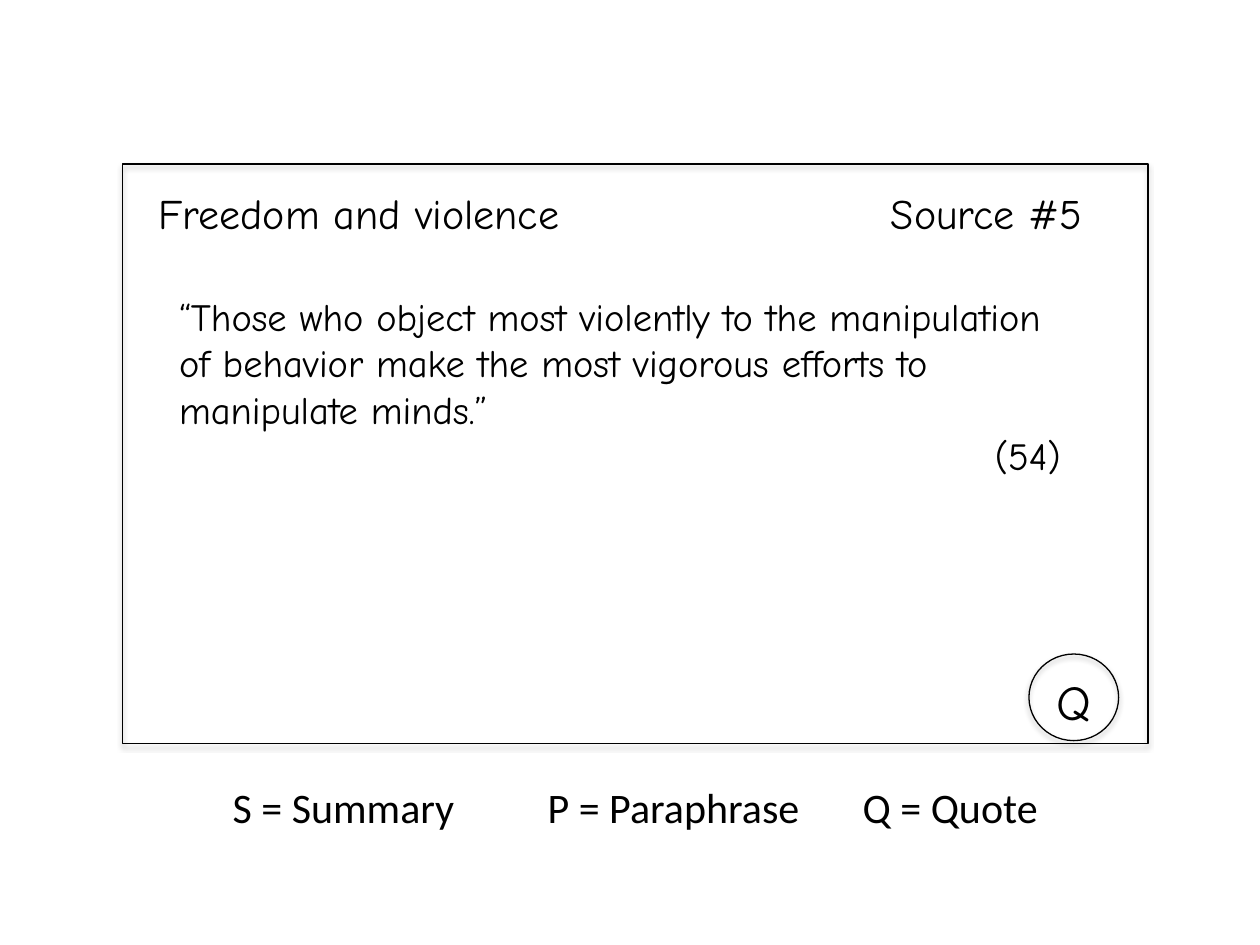
"""Build a slide showing a quotation note card with a key to its note types."""
from lxml import etree
from pptx import Presentation
from pptx.dml.color import RGBColor
from pptx.enum.shapes import MSO_SHAPE
from pptx.enum.text import MSO_AUTO_SIZE, PP_ALIGN
from pptx.util import Pt

RECT, OVAL = MSO_SHAPE.RECTANGLE, MSO_SHAPE.OVAL
LEFT, CENTER, RIGHT = PP_ALIGN.LEFT, PP_ALIGN.CENTER, PP_ALIGN.RIGHT
COLORS = {"ink": "000000"}
INK = RGBColor.from_string(COLORS["ink"])
HAND, PRINT = "Comic Neue", "Calibri"
SHADOW = (
    '<a:effectLst xmlns:a="http://schemas.openxmlformats.org/drawingml/2006/main">'
    f'<a:outerShdw blurRad="{Pt(3.1)}" dist="{Pt(1.8)}" dir="5400000" rotWithShape="0">'
    f'<a:srgbClr val="{COLORS["ink"]}"><a:alpha val="35000"/></a:srgbClr>'
    '</a:outerShdw></a:effectLst>'
)

prs = Presentation()
prs.slide_width, prs.slide_height = Pt(720), Pt(540)
s = prs.slides.add_slide(prs.slide_layouts[6])


def add_text(text, *, box, size=24, font=HAND, aligns=(LEFT,)):
    tf = s.shapes.add_textbox(*map(Pt, box)).text_frame
    tf.word_wrap = True
    tf.auto_size = MSO_AUTO_SIZE.SHAPE_TO_FIT_TEXT
    tf.text = text
    for p, align in zip(tf.paragraphs, aligns):
        p.alignment = align
        for r in p.runs:
            r.font.size, r.font.name = Pt(size), font
            r.font.color.rgb = INK


for kind, box in [(RECT, (70, 93.75, 586, 331)), (OVAL, (588, 373.75, 51.25, 49.5))]:
    sp = s.shapes.add_shape(kind, *map(Pt, box))
    sp.fill.background()
    sp.line.color.rgb = INK
    sp.line.width = Pt(0.75)
    sp.shadow.inherit = False
    effects = sp._element.spPr
    effects.replace(effects[-1], etree.fromstring(SHADOW))

add_text("Freedom and violence", box=(83.5, 103.75, 340, 36))
add_text("Source #5", box=(502, 103.75, 141, 36))
add_text(
    "“Those who object most violently to the manipulation of behavior "
    "make the most vigorous efforts to manipulate minds.”\n(54)",
    box=(95.25, 164, 518, 114), size=22, aligns=(LEFT, RIGHT),
)
add_text("Q", box=(576, 380, 75, 41), size=28, aligns=(CENTER,))
add_text(
    "S = Summary\t\tP = Paraphrase\t\tQ = Quote",
    box=(70, 443, 586, 36), font=PRINT, aligns=(CENTER,),
)

prs.save("out.pptx")
